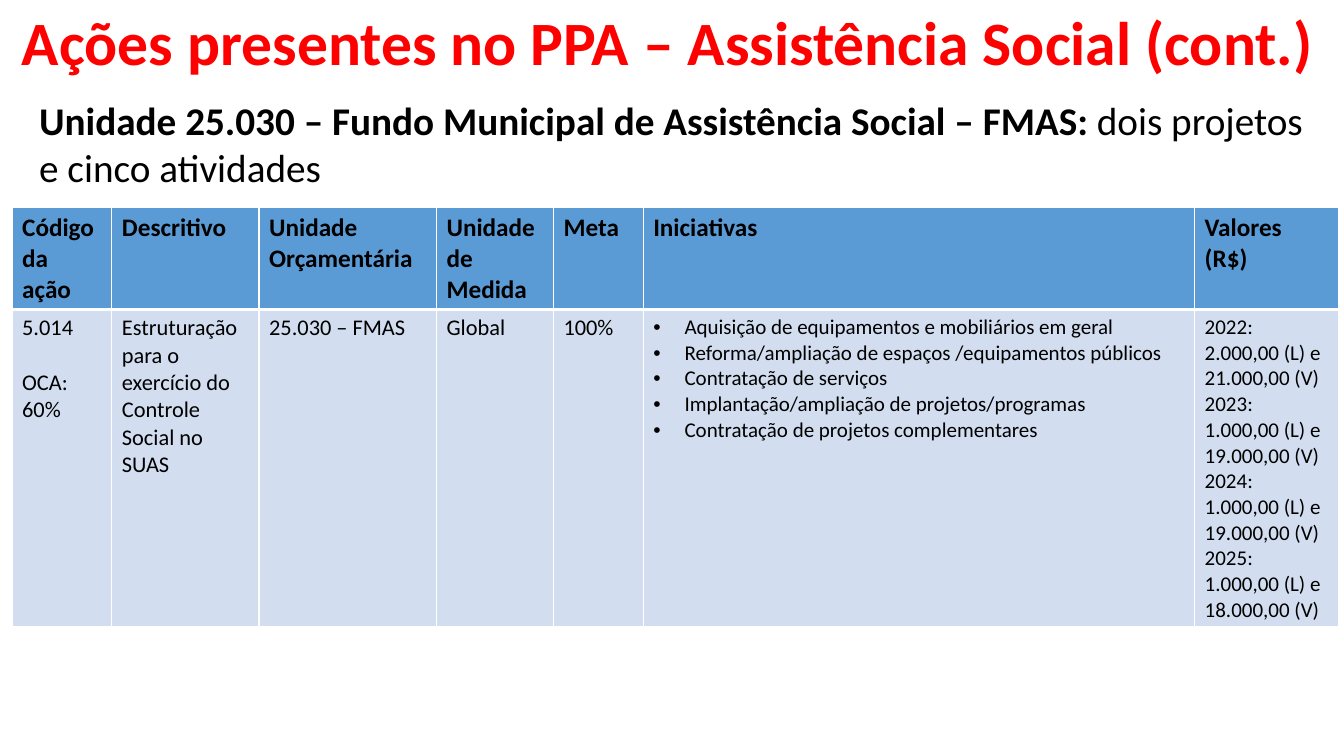
from lxml.etree import SubElement
from pptx import Presentation
from pptx.dml.color import RGBColor
from pptx.enum.text import MSO_ANCHOR
from pptx.oxml import parse_xml
from pptx.oxml.ns import nsdecls, qn
from pptx.util import Inches, Pt

CELL = Inches(0.01)
WIDE, HIGH = 1333, 750
COLORS = {"title": "FF0000", "text": "000000", "head": "5B9BD5",
          "body": "D2DEEF", "rule": "FFFFFF"}
FORMS = {
    "title": {"size": Pt(44), "bold": True},
    "lead": {"size": Pt(28), "bold": True},
    "plain": {"size": Pt(28), "bold": False},
    "head": {"size": Pt(18), "bold": True},
    "body": {"size": Pt(16), "bold": False},
    "list": {"size": Pt(15), "bold": False},
}
COLS = [99, 146, 176, 116, 89, 547, 143]
ROWS = [101, 315]
HEADS = ["Código da ação", "Descritivo", "Unidade Orçamentária",
         "Unidade de Medida", "Meta", "Iniciativas", "Valores (R$)"]
SUMS = [(2022, "2.000", "21.000"), (2023, "1.000", "19.000"),
        (2024, "1.000", "19.000"), (2025, "1.000", "18.000")]
BODY = [
    ["5.014", "OCA: 60%"],
    ["Estruturação para o exercício do Controle Social no SUAS"],
    ["25.030 – FMAS"],
    ["Global"],
    ["100%"],
    ["Aquisição de equipamentos e mobiliários em geral",
     "Reforma/ampliação de espaços /equipamentos públicos",
     "Contratação de serviços",
     "Implantação/ampliação de projetos/programas",
     "Contratação de projetos complementares"],
    [f"{year}: {low},00 (L) e {top},00 (V)" for year, low, top in SUMS],
]


def add_run(para, text, form, color="text"):
    """Add a run of text in a named format."""
    run = para.add_run()
    run.text = text
    run.font.name = "Calibri"
    run.font.color.rgb = RGBColor.from_string(COLORS[color])
    for key, value in FORMS[form].items():
        setattr(run.font, key, value)


def add_box(slide, box):
    """Add a wrapping text box and return its frame."""
    frame = slide.shapes.add_textbox(*(n * CELL for n in box)).text_frame
    frame.word_wrap = True
    return frame


def add_title(slide, box):
    """Place the slide title."""
    frame = add_box(slide, box)
    frame.vertical_anchor = MSO_ANCHOR.MIDDLE
    para = frame.paragraphs[0]
    para.line_spacing = 0.9
    add_run(para, "Ações presentes no PPA – Assistência Social (cont.)",
            "title", "title")


def add_lead(slide, box):
    """Place the line that names the unit."""
    para = add_box(slide, box).paragraphs[0]
    add_run(para, "Unidade 25.030 – Fundo Municipal de Assistência "
            "Social – FMAS: ", "lead")
    add_run(para, "dois projetos e cinco atividades", "plain")


def add_edges(cell, row):
    """Draw the four white edges of a cell."""
    props = cell._tc.get_or_add_tcPr()
    wide = {"L": 1, "R": 1, "T": 1 if row == 0 else 3, "B": 3 if row == 0 else 1}
    for spot, (side, width) in enumerate(wide.items()):
        props.insert(spot, parse_xml(
            f'<a:ln{side} {nsdecls("a")} w="{Pt(width)}"><a:solidFill>'
            f'<a:srgbClr val="{COLORS["rule"]}"/></a:solidFill></a:ln{side}>'))


def add_bullet(para):
    """Give a paragraph a bullet with a hanging indent."""
    props = para._p.get_or_add_pPr()
    props.set("marL", str(31 * CELL))
    props.set("indent", str(-31 * CELL))
    SubElement(props, qn("a:buFont")).set("typeface", "Arial")
    SubElement(props, qn("a:buChar")).set("char", "•")


def fill_cell(cell, row, lines, form):
    """Colour a cell and write its paragraphs."""
    add_edges(cell, row)
    cell.fill.solid()
    cell.fill.fore_color.rgb = RGBColor.from_string(
        COLORS["head" if row == 0 else "body"])
    frame = cell.text_frame
    for spot, line in enumerate(lines):
        para = frame.add_paragraph() if spot else frame.paragraphs[0]
        add_run(para, line, form)


def add_grid(slide, box):
    """Place the table of actions."""
    table = slide.shapes.add_table(
        len(ROWS), len(COLS), *(n * CELL for n in box)).table
    for col, width in zip(table.columns, COLS):
        col.width = width * CELL
    for row, height in zip(table.rows, ROWS):
        row.height = height * CELL
    for col, (head, lines) in enumerate(zip(HEADS, BODY)):
        fill_cell(table.cell(0, col), 0, [head], "head")
        fill_cell(table.cell(1, col), 1, lines, "list" if col > 4 else "body")
    table.cell(1, 0).text_frame.paragraphs[1].space_before = Pt(19.5)
    for para in table.cell(1, 5).text_frame.paragraphs:
        add_bullet(para)


def main():
    """Build and save the slide."""
    deck = Presentation()
    deck.slide_width, deck.slide_height = WIDE * CELL, HIGH * CELL
    slide = deck.slides.add_slide(deck.slide_layouts[6])
    add_title(slide, (12, 0, 1316, 90))
    add_grid(slide, (12, 206, sum(COLS), sum(ROWS)))
    add_lead(slide, (29, 91, 1288, 104))
    deck.save("out.pptx")


if __name__ == "__main__":
    main()
